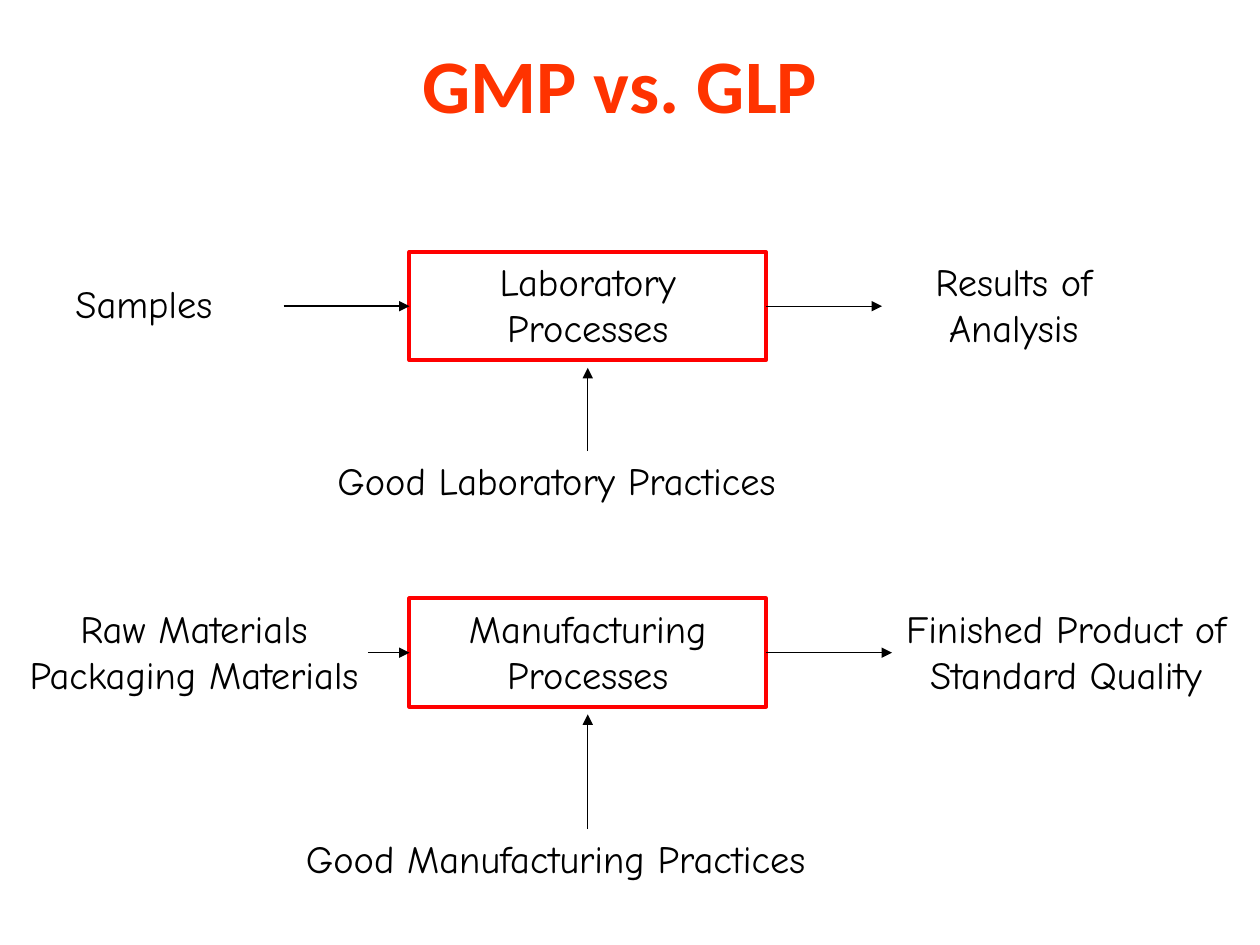
"""Build a slide comparing the GMP and GLP process flows."""
from lxml import etree
from pptx import Presentation
from pptx import util as u
from pptx.dml.color import RGBColor
from pptx.enum import shapes, text
from pptx.oxml.ns import qn

TITLE = "GMP vs. GLP"
BOX_LEFT, BOX_WIDTH, BOX_HEIGHT = 3.25, 2.83, 0.86
OUTPUT_LEFT, LABEL_HEIGHT, ONE_LINE = 6.92, 0.83, 0.47
LEFT, CENTER = text.PP_ALIGN.LEFT, text.PP_ALIGN.CENTER

FLOWS = [
    {
        "top": 2,
        "input": ("Samples", 0.5, 2.17, 1.75, ONE_LINE, LEFT),
        "process": "Laboratory Processes",
        "output": ("Results of Analysis", 2.25),
        "practice": ("Good Laboratory Practices", 2.58, 3.58, 4.67),
        "input_arrow": (2.25, 1),
        "output_arrow_end": 7,
    },
    {
        "top": 4.75,
        "input": ("Raw Materials Packaging Materials", 0, 4.75, 3.08, LABEL_HEIGHT, CENTER),
        "process": "Manufacturing Processes",
        "output": ("Finished Product of Standard Quality", 3.08),
        "practice": ("Good Manufacturing Practices", 2.33, 6.58, 5),
        "input_arrow": (2.92, 0.75),
        "output_arrow_end": 7.08,
    },
]


def color(hex_code):
    return RGBColor.from_string(hex_code)


def write(part, words, size=22, font="Comic Neue", ink="000000", bold=False,
          align=CENTER, anchor=text.MSO_ANCHOR.TOP, fit=text.MSO_AUTO_SIZE.SHAPE_TO_FIT_TEXT):
    frame = part.text_frame
    frame.word_wrap = True
    frame.auto_size = fit
    frame.vertical_anchor = anchor
    paragraph = frame.paragraphs[0]
    paragraph.alignment = align
    run = paragraph.add_run()
    run.text = words
    run.font.size = u.Pt(size)
    run.font.name = font
    run.font.bold = bold
    run.font.color.rgb = color(ink)


def add_label(slide, words, left, top, width, height, align=CENTER):
    label = slide.shapes.add_textbox(*map(u.Inches, (left, top, width, height)))
    write(label, words, align=align)


def add_process(slide, words, top):
    process = slide.shapes.add_shape(
        shapes.MSO_SHAPE.RECTANGLE, *map(u.Inches, (BOX_LEFT, top, BOX_WIDTH, BOX_HEIGHT)))
    process.shadow.inherit = False
    process.fill.background()
    process.line.color.rgb = color("FF0000")
    process.line.width = u.Pt(2.25)
    write(process, words)
    return process


def add_arrow(slide, start, end, weight=0.75):
    arrow = slide.shapes.add_connector(
        shapes.MSO_CONNECTOR.STRAIGHT, *map(u.Inches, start + end))
    arrow.line.color.rgb = color("000000")
    arrow.line.width = u.Pt(weight)
    etree.SubElement(arrow.line._get_or_add_ln(), qn("a:tailEnd"), type="triangle")
    etree.SubElement(arrow._element.spPr, qn("a:effectLst"))
    return arrow


def add_flow(slide, flow):
    top = flow["top"]
    middle = top + BOX_HEIGHT / 2
    center = BOX_LEFT + BOX_WIDTH / 2
    right = BOX_LEFT + BOX_WIDTH

    add_label(slide, *flow["input"])
    process = add_process(slide, flow["process"], top)
    output, output_width = flow["output"]
    add_label(slide, output, OUTPUT_LEFT, top, output_width, LABEL_HEIGHT)
    practice, left, practice_top, width = flow["practice"]
    add_label(slide, practice, left, practice_top, width, ONE_LINE, LEFT)

    input_start, weight = flow["input_arrow"]
    add_arrow(slide, (input_start, middle), (BOX_LEFT, middle), weight).end_connect(process, 1)
    add_arrow(slide, (right, middle), (flow["output_arrow_end"], middle)).begin_connect(process, 3)
    add_arrow(slide, (center, practice_top), (center, top + BOX_HEIGHT + 0.06))


def main():
    deck = Presentation()
    deck.slide_width, deck.slide_height = u.Inches(10), u.Inches(7.5)
    slide = deck.slides.add_slide(deck.slide_layouts.get_by_name("Title Only"))
    title = slide.shapes.title
    title.left, title.top, title.width, title.height = map(u.Inches, (0.67, 0.33, 8.5, 0.67))
    write(title, TITLE, size=43.2, font="Calibri", ink="FF3300", bold=True,
          anchor=text.MSO_ANCHOR.MIDDLE, fit=text.MSO_AUTO_SIZE.NONE)
    for flow in FLOWS:
        add_flow(slide, flow)
    deck.save("out.pptx")


if __name__ == "__main__":
    main()
